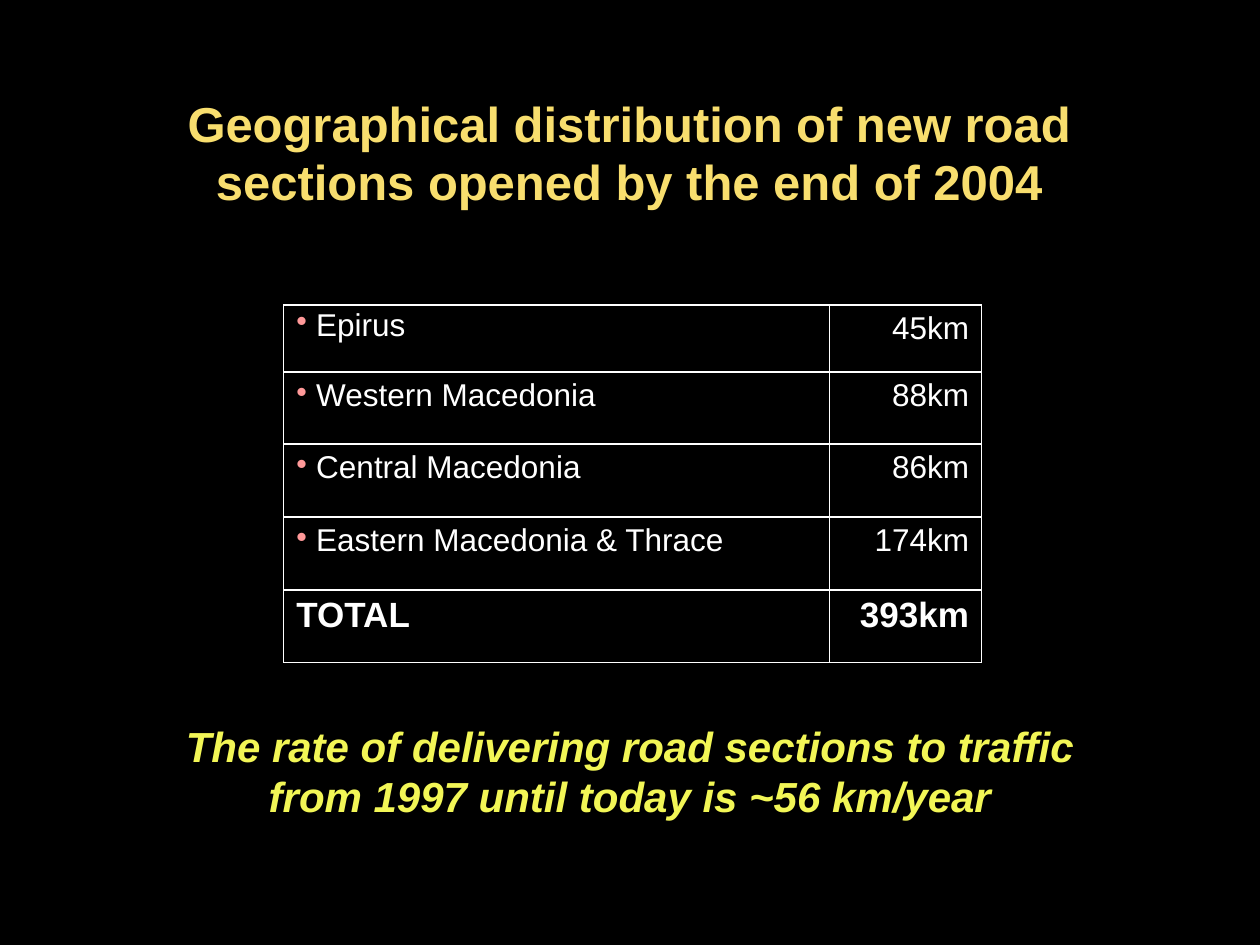
from dataclasses import dataclass

from lxml import etree
from pptx import Presentation
from pptx.dml.color import RGBColor
from pptx.enum.text import MSO_ANCHOR, MSO_AUTO_SIZE, PP_ALIGN
from pptx.oxml.ns import qn
from pptx.util import Cm, Pt

LEFT, CENTER, RIGHT = PP_ALIGN.LEFT, PP_ALIGN.CENTER, PP_ALIGN.RIGHT
TOP = MSO_ANCHOR.TOP
FIT_SHAPE = MSO_AUTO_SIZE.SHAPE_TO_FIT_TEXT
TITLE_ONLY = 5

BLACK, WHITE, PINK = "000000", "FFFFFF", "FF9999"
GOLD, YELLOW = "F8DE6E", "F2F656"


@dataclass
class Region:
    name: str
    length: str
    height: float
    total: bool = False


REGIONS = [
    Region(" Epirus", "45km", 1.35),
    Region(" Western Macedonia", "88km", 1.45),
    Region(" Central Macedonia", "86km", 1.47),
    Region(" Eastern Macedonia & Thrace", "174km", 1.47),
    Region("TOTAL", "393km", 1.47, total=True),
]
COLUMN_WIDTHS = [11, 3.07]


def color(value: str) -> RGBColor:
    return RGBColor.from_string(value)


def write(frame, text: str, size: float, tint: str, align,
          bold: bool = False, italic: bool = False) -> None:
    frame.text = text
    for para in frame.paragraphs:
        para.alignment = align
        for span in para.runs:
            font = span.font
            font.name, font.size = "Arial", Pt(size)
            font.bold, font.italic = bold, italic
            font.color.rgb = color(tint)


def add_bullet(para, tint: str) -> None:
    properties = para._p.get_or_add_pPr()
    properties.set("marL", "0")
    properties.set("indent", "0")
    bullet_color = etree.SubElement(properties, qn("a:buClr"))
    etree.SubElement(bullet_color, qn("a:srgbClr"), val=tint)
    etree.SubElement(properties, qn("a:buChar"), char="•")


def style_cell(cell) -> None:
    properties = cell._tc.get_or_add_tcPr()
    for side in ("a:lnL", "a:lnR", "a:lnT", "a:lnB"):
        line = etree.SubElement(properties, qn(side), w=str(Pt(1)))
        fill = etree.SubElement(line, qn("a:solidFill"))
        etree.SubElement(fill, qn("a:srgbClr"), val=WHITE)
    cell.fill.background()


def add_region_table(page) -> None:
    frame = page.shapes.add_table(
        len(REGIONS), len(COLUMN_WIDTHS), Cm(5.72), Cm(6.15),
        Cm(sum(COLUMN_WIDTHS)), Cm(sum(region.height for region in REGIONS)))
    table = frame.table
    table.first_row = table.horz_banding = False
    for column, width in zip(table.columns, COLUMN_WIDTHS):
        column.width = Cm(width)
    for row, region in zip(table.rows, REGIONS):
        row.height = Cm(region.height)
        size = 20 if region.total else 18
        texts = (region.name, region.length)
        for cell, text, align in zip(row.cells, texts, (LEFT, RIGHT)):
            style_cell(cell)
            write(cell.text_frame, text, size, WHITE, align, bold=region.total)
        if not region.total:
            add_bullet(row.cells[0].text_frame.paragraphs[0], PINK)
    # The first name is set slightly tighter than the others
    table.cell(0, 0).text_frame.paragraphs[0].line_spacing = 0.9


def add_title(page) -> None:
    title = page.shapes.title
    title.left, title.top = Cm(1.57), Cm(1.75)
    title.width, title.height = Cm(22.23), Cm(2.62)
    frame = title.text_frame
    frame.word_wrap, frame.auto_size = True, FIT_SHAPE
    frame.vertical_anchor = TOP
    write(frame, "Geographical distribution of new road sections opened "
          "by the end of 2004", 28, GOLD, CENTER, bold=True)


def add_rate_note(page) -> None:
    box = page.shapes.add_textbox(Cm(3.38), Cm(14.4), Cm(18.64), Cm(2.29))
    frame = box.text_frame
    frame.word_wrap, frame.auto_size = False, FIT_SHAPE
    write(frame, "The rate of delivering road sections to traffic \n"
          "from 1997 until today is ~56 km/year",
          24, YELLOW, CENTER, bold=True, italic=True)


def main() -> None:
    deck = Presentation()
    deck.slide_width, deck.slide_height = Cm(25.4), Cm(19.05)
    page = deck.slides.add_slide(deck.slide_layouts[TITLE_ONLY])

    # Black background
    background = page.background.fill
    background.solid()
    background.fore_color.rgb = color(BLACK)

    add_title(page)
    add_region_table(page)
    add_rate_note(page)
    deck.save("out.pptx")


if __name__ == "__main__":
    main()
